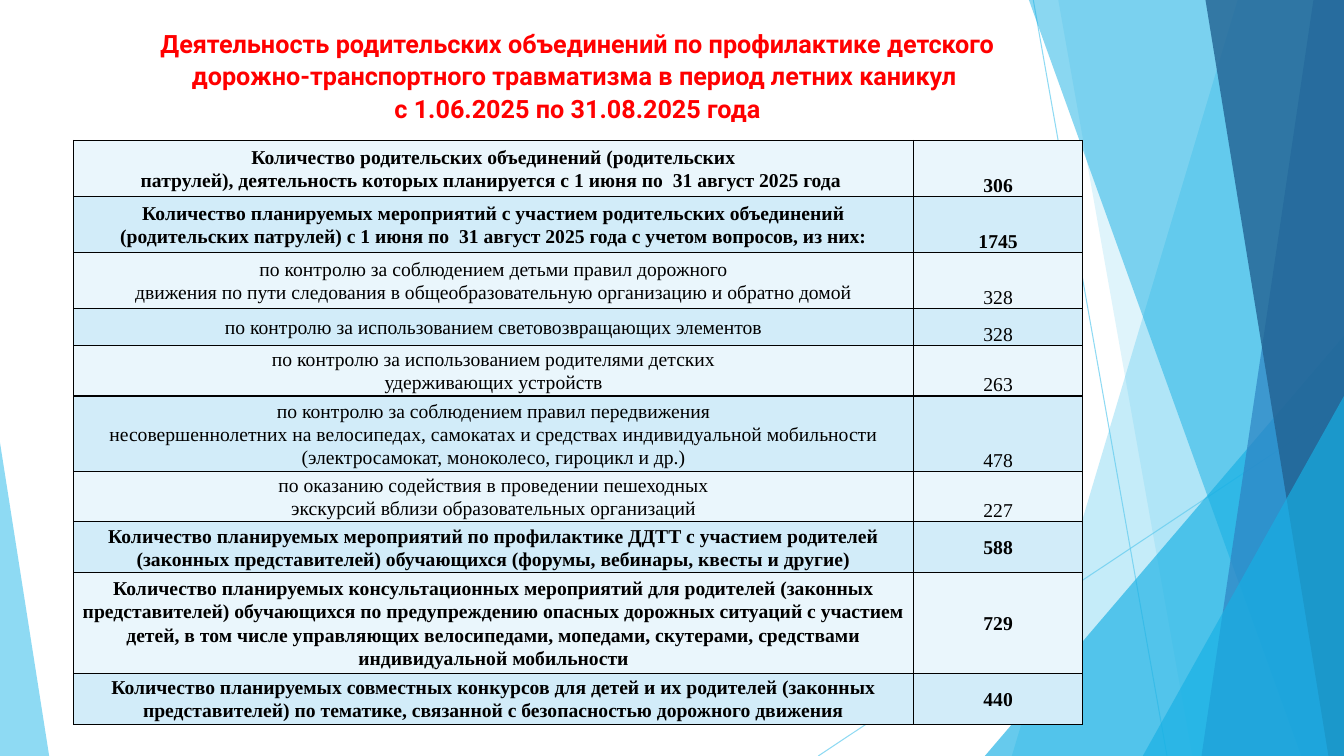
from dataclasses import dataclass

from lxml import etree
from pptx import Presentation
from pptx.dml.color import RGBColor
from pptx.enum.shapes import MSO_CONNECTOR, MSO_SHAPE
from pptx.enum.text import MSO_ANCHOR, MSO_AUTO_SIZE, PP_ALIGN
from pptx.oxml.ns import qn
from pptx.util import Cm, Pt

CENTER = PP_ALIGN.CENTER
TOP, MIDDLE, BOTTOM = MSO_ANCHOR.TOP, MSO_ANCHOR.MIDDLE, MSO_ANCHOR.BOTTOM
TRIANGLE = MSO_SHAPE.ISOSCELES_TRIANGLE
STRAIGHT = MSO_CONNECTOR.STRAIGHT
FIT_SHAPE = MSO_AUTO_SIZE.SHAPE_TO_FIT_TEXT
TITLE_ONLY = 5

COLORS = {
    "sky": "5FCBEF", "cyan": "17B0E4", "blue": "2E83C3", "navy": "226292",
    "red": "FF0000", "black": "000000", "pale": "EAF6FC", "light": "D2ECF9",
}
WIDTH, HEIGHT = 33.87, 19.05
LINE_SPACING = 1.07


@dataclass
class Ray:
    start: tuple[float, float]
    end: tuple[float, float]


@dataclass
class Band:
    top_x: float
    bottom_x: float
    color: str
    opacity: int


@dataclass
class Corner:
    left: float
    top: float
    width: float
    apex: float
    color: str
    opacity: int


@dataclass
class Row:
    label: str
    value: str
    height: float
    bold: bool = False
    value_anchor: MSO_ANCHOR = BOTTOM


# Back to front
DECORATIONS = [
    Ray((26.04, 0), (29.41, HEIGHT)),
    Ray((WIDTH, 10.24), (20.62, HEIGHT)),
    Band(31.19, 25.5, "sky", 36),
    Band(26.67, 30.05, "sky", 20),
    Corner(24.82, 8.46, 9.05, 1, "cyan", 66),
    Band(25.93, 32.79, "cyan", 50),
    Band(33.1, 30.28, "blue", 70),
    Band(30.38, 33.48, "navy", 80),
    Corner(28.8, 9.98, 5.07, 1, "cyan", 66),
    Corner(0, 11.15, 1.24, 0, "sky", 70),
]

TITLE = [
    "Деятельность родительских объединений по профилактике детского "
    "дорожно-транспортного травматизма в период летних каникул ",
    "с 1.06.2025 по 31.08.2025 года",
]

ROWS = [
    Row("Количество родительских объединений (родительских\nпатрулей), деятельность "
        "которых планируется с 1 июня по  31 август 2025 года ", "306", 1.41, True),
    Row("Количество планируемых мероприятий с участием родительских объединений "
        "(родительских патрулей) с 1 июня по  31 август 2025 года с учетом вопросов, "
        "из них:", "1745", 1.41, True),
    Row("по контролю за соблюдением детьми правил дорожного\nдвижения по пути "
        "следования в общеобразовательную организацию и обратно домой", "328", 1.41),
    Row("по контролю за использованием световозвращающих элементов", "328", 0.94),
    Row("по контролю за использованием родителями детских\nудерживающих устройств",
        "263", 1.25),
    Row("по контролю за соблюдением правил передвижения\nнесовершеннолетних на "
        "велосипедах, самокатах и средствах индивидуальной мобильности\n"
        "(электросамокат, моноколесо, гироцикл и др.)", "478", 1.9),
    Row("по оказанию содействия в проведении пешеходных\nэкскурсий вблизи "
        "образовательных организаций", "227", 1.25),
    Row("Количество планируемых мероприятий по профилактике ДДТТ с участием родителей "
        "(законных представителей) обучающихся (форумы, вебинары, квесты и другие)",
        "588", 1.28, True, MIDDLE),
    Row("Количество планируемых консультационных мероприятий для родителей (законных "
        "представителей) обучающихся по предупреждению опасных дорожных ситуаций с "
        "участием детей, в том числе управляющих велосипедами, мопедами, скутерами, "
        "средствами индивидуальной мобильности", "729", 2.53, True, MIDDLE),
    Row("Количество планируемых совместных конкурсов для детей и их родителей (законных "
        "представителей) по тематике, связанной с безопасностью дорожного движения",
        "440", 1.28, True, MIDDLE),
]


def rgb(name: str) -> RGBColor:
    return RGBColor.from_string(COLORS[name])


def set_opacity(shape, percent: int) -> None:
    for color in shape.element.spPr.iter(qn("a:srgbClr")):
        etree.SubElement(color, qn("a:alpha")).set("val", str(percent * 1000))


def fill_shape(shape, color: str, opacity: int) -> None:
    shape.shadow.inherit = False
    shape.fill.solid()
    shape.fill.fore_color.rgb = rgb(color)
    shape.line.fill.background()
    set_opacity(shape, opacity)


def draw_ray(slide, ray: Ray) -> None:
    connector = slide.shapes.add_connector(
        STRAIGHT, *(Cm(value) for value in ray.start + ray.end))
    connector.line.color.rgb = rgb("sky")
    connector.line.width = Pt(0.75)
    set_opacity(connector, 70)
    etree.SubElement(connector.element.spPr, qn("a:effectLst"))


def draw_band(slide, band: Band) -> None:
    """Fill from a slanted left edge to the right side of the slide."""
    builder = slide.shapes.build_freeform(Cm(band.top_x), Cm(0))
    corners = [(WIDTH, 0), (WIDTH, HEIGHT), (band.bottom_x, HEIGHT)]
    builder.add_line_segments([(Cm(x), Cm(y)) for x, y in corners], close=True)
    fill_shape(builder.convert_to_shape(), band.color, band.opacity)


def draw_corner(slide, corner: Corner) -> None:
    shape = slide.shapes.add_shape(
        TRIANGLE, Cm(corner.left), Cm(corner.top),
        Cm(corner.width), Cm(HEIGHT - corner.top))
    shape.adjustments[0] = corner.apex
    fill_shape(shape, corner.color, corner.opacity)


def format_paragraph(paragraph, font: str, size: int, color: str, bold: bool) -> None:
    paragraph.alignment = CENTER
    paragraph.line_spacing = LINE_SPACING
    paragraph.font.name = font
    paragraph.font.size = Pt(size)
    paragraph.font.bold = bold
    paragraph.font.color.rgb = rgb(color)


def write_title(slide) -> None:
    title = slide.shapes.title
    title.left, title.top, title.width, title.height = Cm(2.57), Cm(0.53), Cm(24.71), Cm(2.67)
    title.element.getparent().append(title.element)  # in front of the decorations
    frame = title.text_frame
    frame.text = "\n".join(TITLE)
    frame.word_wrap = True
    frame.auto_size = FIT_SHAPE
    frame.vertical_anchor = TOP
    frame.margin_right = Cm(1)
    for paragraph in frame.paragraphs:
        format_paragraph(paragraph, "Roboto", 18, "red", True)


def add_borders(cell) -> None:
    properties = cell._tc.get_or_add_tcPr()
    for side in ("lnL", "lnR", "lnT", "lnB"):
        line = etree.SubElement(properties, qn(f"a:{side}"), w=str(Pt(1)))
        fill = etree.SubElement(line, qn("a:solidFill"))
        etree.SubElement(fill, qn("a:srgbClr"), val=COLORS["black"])


def write_cell(cell, text: str, bold: bool, anchor: MSO_ANCHOR, color: str) -> None:
    add_borders(cell)
    cell.fill.solid()
    cell.fill.fore_color.rgb = rgb(color)
    cell.margin_left = cell.margin_right = Cm(0.15)
    cell.margin_top = cell.margin_bottom = 0
    cell.vertical_anchor = anchor
    paragraph = cell.text_frame.paragraphs[0]
    paragraph.text = text
    paragraph.space_after = Pt(8)
    format_paragraph(paragraph, "Times New Roman", 14, "black", bold)


def draw_table(slide) -> None:
    widths = [21.16, 4.27]
    table = slide.shapes.add_table(
        len(ROWS), len(widths), Cm(1.86), Cm(3.54),
        Cm(sum(widths)), Cm(sum(row.height for row in ROWS))).table
    table.first_row = table.horz_banding = False
    for column, width in zip(table.columns, widths):
        column.width = Cm(width)
    for index, row in enumerate(ROWS):
        table.rows[index].height = Cm(row.height)
        color = ("pale", "light")[index % 2]
        write_cell(table.cell(index, 0), row.label, row.bold, MIDDLE, color)
        write_cell(table.cell(index, 1), row.value, row.bold, row.value_anchor, color)


def main() -> None:
    presentation = Presentation()
    presentation.slide_width, presentation.slide_height = Cm(WIDTH), Cm(HEIGHT)
    slide = presentation.slides.add_slide(presentation.slide_layouts[TITLE_ONLY])
    painters = {Ray: draw_ray, Band: draw_band, Corner: draw_corner}
    for decoration in DECORATIONS:
        painters[type(decoration)](slide, decoration)
    write_title(slide)
    draw_table(slide)
    presentation.save("out.pptx")


if __name__ == "__main__":
    main()
